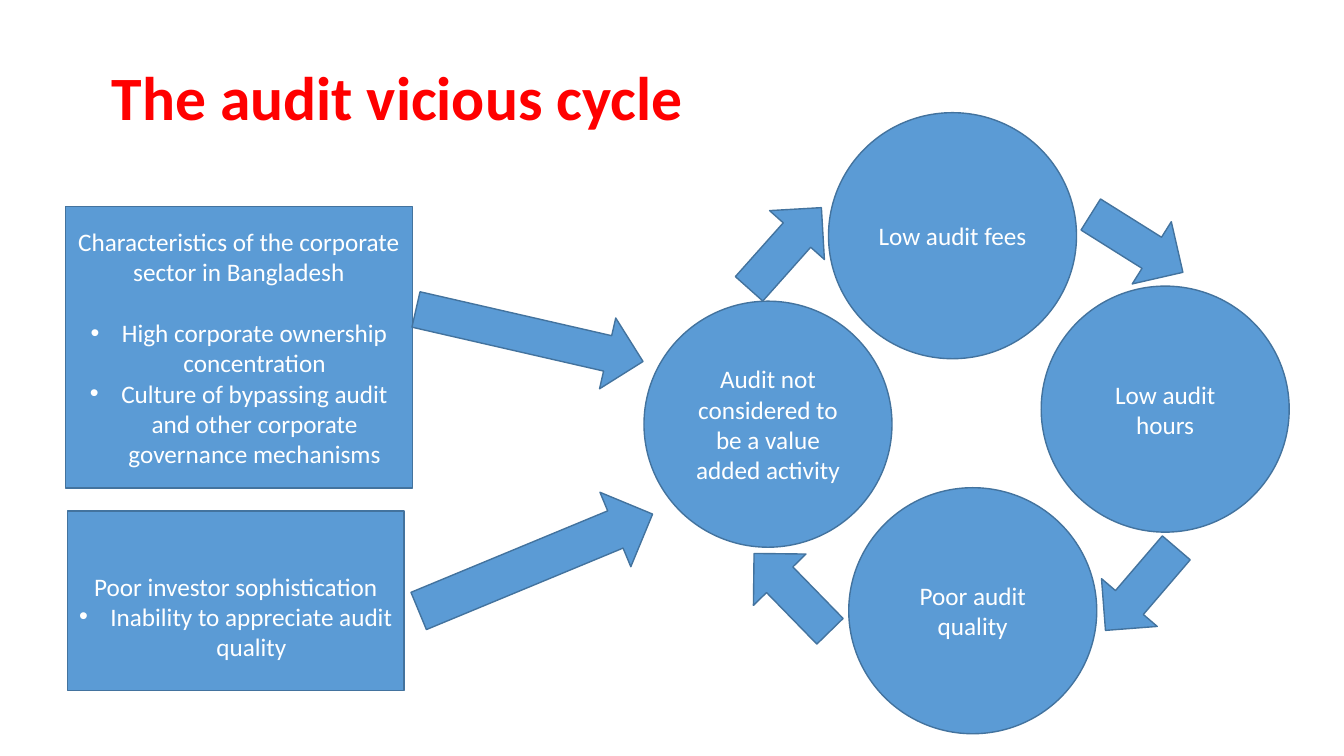
from dataclasses import dataclass

from lxml import etree
from pptx import Presentation
from pptx.dml.color import RGBColor
from pptx.enum.shapes import MSO_SHAPE
from pptx.enum.text import MSO_ANCHOR, PP_ALIGN
from pptx.oxml.ns import qn
from pptx.shapes.autoshape import Shape
from pptx.slide import Slide
from pptx.text.text import _Paragraph
from pptx.util import Cm, Pt

RECTANGLE = MSO_SHAPE.RECTANGLE
ELLIPSE = MSO_SHAPE.OVAL
RIGHT_ARROW = MSO_SHAPE.RIGHT_ARROW
MIDDLE = MSO_ANCHOR.MIDDLE
CENTER = PP_ALIGN.CENTER


@dataclass(frozen=True)
class Theme:
    font: str = "Calibri"
    title_color: RGBColor = RGBColor(0xFF, 0x00, 0x00)
    text_color: RGBColor = RGBColor(0xFF, 0xFF, 0xFF)
    fill: RGBColor = RGBColor(0x5B, 0x9B, 0xD5)
    outline: RGBColor = RGBColor(0x43, 0x73, 0x9E)
    title_size: Pt = Pt(44)
    body_size: Pt = Pt(18)
    outline_width: Pt = Pt(1)
    line_gap: Pt = Pt(22)
    bullet_indent: Cm = Cm(0.79)


@dataclass(frozen=True)
class Box:
    """Position and size in centimetres."""
    left: float
    top: float
    width: float
    height: float

    def lengths(self) -> tuple[Cm, Cm, Cm, Cm]:
        return Cm(self.left), Cm(self.top), Cm(self.width), Cm(self.height)


@dataclass(frozen=True)
class Cause:
    box: Box
    heading: str
    bullets: tuple[str, ...]
    bullet_gap: Pt = Pt(0)
    top_inset: float = 0.13


@dataclass(frozen=True)
class Stage:
    text: str
    left: float
    top: float


@dataclass(frozen=True)
class Arrow:
    box: Box
    rotation: float


THEME = Theme()
TITLE = "The audit vicious cycle"
TITLE_BOX = Box(2.57, 0.69, 15.44, 3.68)
STAGE_WIDTH, STAGE_HEIGHT = 6.25, 6.2
LINK_WIDTH, LINK_HEIGHT = 2.74, 1.85

CAUSES = (
    Cause(
        Box(1.65, 5.21, 8.74, 7.09),
        "Characteristics of the corporate sector in Bangladesh",
        ("High corporate ownership concentration",
         "Culture of bypassing audit and other corporate governance mechanisms"),
        bullet_gap=THEME.line_gap,
    ),
    Cause(
        Box(1.7, 12.88, 8.48, 4.52),
        "Poor investor sophistication",
        ("Inability to appreciate audit quality",),
        top_inset=0.9,
    ),
)
STAGES = (
    Stage("Low audit fees", 20.88, 2.84),
    Stage("Poor audit quality", 21.39, 12.29),
    Stage("Audit not considered to be a value added activity", 16.23, 7.59),
    Stage("Low audit hours", 26.24, 7.21),
)
CAUSE_ARROWS = (
    Arrow(Box(10.41, 7.54, 5.87, 1.83), 12.9),
    Arrow(Box(10.31, 13.16, 6.38, 2.03), 337.5),
)
CYCLE_ARROWS = tuple(
    Arrow(Box(left, top, LINK_WIDTH, LINK_HEIGHT), rotation)
    for left, top, rotation in (
        (18.42, 5.33, 311.7),
        (27.28, 5.21, 32.1),
        (18.59, 14.0, 225.7),
        (27.38, 13.92, 130.6),
    )
)


def add_block(slide: Slide, kind: MSO_SHAPE, box: Box) -> Shape:
    """Add a preset shape in the slide's common fill and outline."""
    block = slide.shapes.add_shape(kind, *box.lengths())
    block.shadow.inherit = False
    block.fill.solid()
    block.fill.fore_color.rgb = THEME.fill
    block.line.color.rgb = THEME.outline
    block.line.width = THEME.outline_width
    block.text_frame.word_wrap = True
    block.text_frame.vertical_anchor = MIDDLE
    return block


def write_body(paragraph: _Paragraph, text: str) -> None:
    paragraph.text = text
    paragraph.alignment = CENTER
    paragraph.font.name = THEME.font
    paragraph.font.size = THEME.body_size
    paragraph.font.color.rgb = THEME.text_color


def set_bullet(paragraph: _Paragraph) -> None:
    properties = paragraph._p.get_or_add_pPr()
    properties.set("marL", str(THEME.bullet_indent))
    properties.set("indent", str(-THEME.bullet_indent))
    bullet_font = etree.Element(qn("a:buFont"), typeface="Arial")
    bullet = etree.Element(qn("a:buChar"), char="•")
    font_defaults = properties.find(qn("a:defRPr"))
    font_defaults.addprevious(bullet_font)
    font_defaults.addprevious(bullet)


def add_title(slide: Slide) -> None:
    title = slide.shapes.add_textbox(*TITLE_BOX.lengths()).text_frame
    title.word_wrap = True
    title.vertical_anchor = MIDDLE
    heading = title.paragraphs[0]
    heading.text = TITLE
    heading.line_spacing = 0.9
    heading.font.name = THEME.font
    heading.font.size = THEME.title_size
    heading.font.bold = True
    heading.font.color.rgb = THEME.title_color


def add_cause(slide: Slide, cause: Cause) -> None:
    frame = add_block(slide, RECTANGLE, cause.box).text_frame
    frame.margin_top = Cm(cause.top_inset)
    write_body(frame.paragraphs[0], cause.heading)
    frame.paragraphs[0].space_after = cause.bullet_gap
    for bullet_text in cause.bullets:
        bullet = frame.add_paragraph()
        write_body(bullet, bullet_text)
        set_bullet(bullet)


def add_stage(slide: Slide, stage: Stage) -> None:
    box = Box(stage.left, stage.top, STAGE_WIDTH, STAGE_HEIGHT)
    circle = add_block(slide, ELLIPSE, box)
    write_body(circle.text_frame.paragraphs[0], stage.text)


def add_arrow(slide: Slide, arrow: Arrow) -> None:
    add_block(slide, RIGHT_ARROW, arrow.box).rotation = arrow.rotation


def main() -> None:
    presentation = Presentation()
    presentation.slide_width = Cm(33.87)
    presentation.slide_height = Cm(19.05)
    slide = presentation.slides.add_slide(presentation.slide_layouts[6])
    add_title(slide)
    for cause in CAUSES:
        add_cause(slide, cause)
    for stage in STAGES:
        add_stage(slide, stage)
    for arrow in CAUSE_ARROWS + CYCLE_ARROWS:
        add_arrow(slide, arrow)
    presentation.save("out.pptx")


if __name__ == "__main__":
    main()
